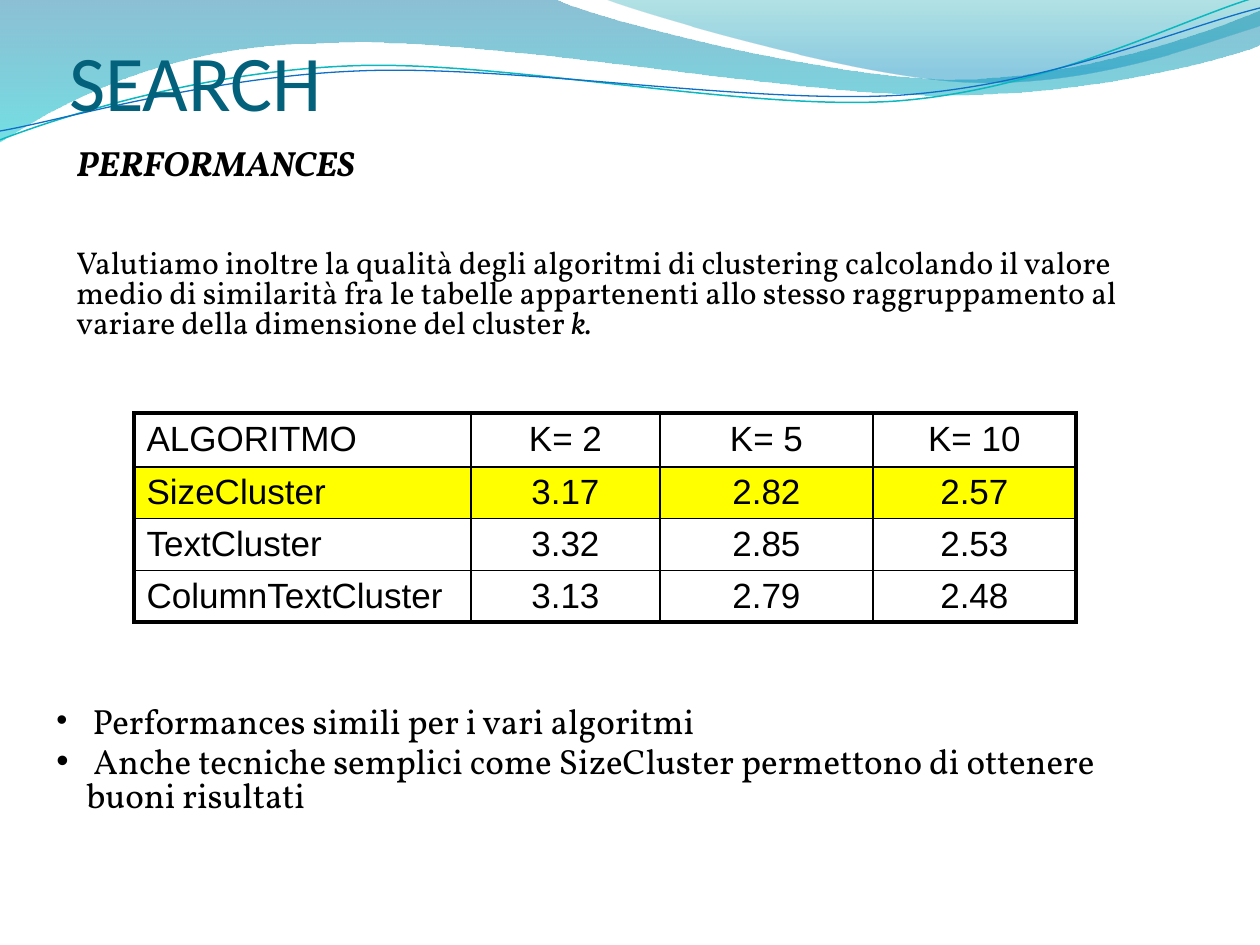
from math import cos, radians, sin

from lxml import etree
from pptx import Presentation
from pptx.dml.color import RGBColor
from pptx.enum.text import MSO_ANCHOR as Anchor, MSO_AUTO_SIZE as AutoSize, PP_ALIGN as Align
from pptx.oxml.ns import qn
from pptx.util import Pt

PX = 914400 / 126  # EMU in one px
TILT = -2.7        # degrees the thin strands are turned


def px(*lengths):
    return [round(length * PX) for length in lengths]


def color(hex_text):
    return RGBColor.from_string(hex_text)


deck = Presentation()
deck.slide_width, deck.slide_height = px(1260, 945)
page = deck.slides.add_slide(deck.slide_layouts[5])

# Waves: start, then line ends (2 numbers) or Bezier curves (6 numbers);
# the bands have gradient stops (position, colour, opacity),
# the strands a line colour, a line width and the centre they turn about
waves = [
    ([(0, -1), (554, -1), (600, 21, 837, 79, 955, 79),
      (1075, 79, 1207, 33, 1260, 11), (1261, 45),
      (1239, 55, 1096, 96, 940, 95), (784, 95, 481, 35, 324, 43),
      (163, 44, 58, 105, -1, 142), (0, -1)],
     [(0, "0074A1", 45), (100, "00C6CF", 55)], None),
    ([(604, -1), (641, 14, 859, 78, 969, 82),
      (1097, 87, 1211, 40, 1260, 26), (1260, 0), (604, -1)],
     [(0, "00A1A9", 30), (80, "008BBF", 45)], None),
    ([(0, 140), (60, 117, 199, 72, 349, 66), (498, 59, 747, 112, 898, 101),
      (1050, 89, 1182, 19, 1257, -3)], None, ("0AB8BF", 0.85, 629, 72)),
    ([(0, 131), (59, 121, 207, 77, 357, 71), (508, 64, 752, 105, 903, 95),
      (1053, 84, 1186, 26, 1260, 8)], None, ("0F6FC6", 0.75, 629, 74)),
]
for segments, stops, strand in waves:
    points = [pair for segment in segments for pair in zip(segment[::2], segment[1::2])]
    if strand:
        # Level the strand; the shape's rotation tilts it again
        hex_text, width, mid_x, mid_y = strand
        turn = radians(-TILT)
        points = [(mid_x + (x - mid_x) * cos(turn) - (y - mid_y) * sin(turn),
                   mid_y + (x - mid_x) * sin(turn) + (y - mid_y) * cos(turn))
                  for x, y in points]
    builder = page.shapes.build_freeform(*px(*points[0]))
    builder.add_line_segments([px(*point) for point in points[1:]],
                              close=stops is not None)
    wave = builder.convert_to_shape()
    wave.shadow.inherit = False

    # Each run of three points that belongs to a curve becomes one Bezier
    outline = wave._element.find(".//" + qn("a:path"))
    nodes = iter(outline.findall(qn("a:lnTo")))
    for segment in segments[1:]:
        first = next(nodes)
        if len(segment) == 6:
            curve = etree.Element(qn("a:cubicBezTo"))
            first.addprevious(curve)
            for node in (first, next(nodes), next(nodes)):
                curve.append(node[0])
                outline.remove(node)

    if strand:
        wave.rotation = TILT
        wave.fill.background()
        wave.line.color.rgb = color(hex_text)
        wave.line.width = Pt(width)
    else:
        wave.line.fill.background()
        wave.fill.gradient()
        wave.fill.gradient_angle = 270
        stop_list = wave.fill._fill._gradFill.find(qn("a:gsLst"))
        for old_stop in list(stop_list):
            stop_list.remove(old_stop)
        for position, hex_text, opacity in stops:
            stop = etree.SubElement(stop_list, qn("a:gs"), pos=str(position * 1000))
            tint = etree.SubElement(stop, qn("a:srgbClr"), val=hex_text)
            etree.SubElement(tint, qn("a:alpha"), val=str(opacity * 1000))

# Title, in front of the waves
title = page.shapes.title
page.shapes._spTree.append(title._element)
title.left, title.top, title.width, title.height = px(69, 20, 1134, 107)
frame = title.text_frame
frame.vertical_anchor = Anchor.BOTTOM
frame.margin_left, frame.margin_top, frame.margin_right, frame.margin_bottom = px(0, 6, 0, 6)
frame.margin_bottom = 0
para = frame.paragraphs[0]
para.alignment = Align.LEFT
span = para.add_run()
span.text = "SEARCH"
span.font.size, span.font.name = Pt(45), "Calibri"
span.font.color.rgb = color("04617B")

# Table of mean similarity by cluster size; rows grow to fit their text
rows = [
    ("ALGORITMO", "K= 2", "K= 5", "K= 10"),
    ("SizeCluster", "3.17", "2.82", "2.57"),
    ("TextCluster", "3.32", "2.85", "2.53"),
    ("ColumnTextCluster", "3.13", "2.79", "2.48"),
]
widths, heights = (337, 189, 213, 203), (54, 23, 23, 39)
holder = page.shapes.add_table(4, 4, *px(134, 413, sum(widths), 218))
table = holder.table
table.first_row = table.horz_banding = False
for column, width in zip(table.columns, px(*widths)):
    column.width = width
for row, height in zip(table.rows, px(*heights)):
    row.height = height
holder.height = px(218)[0]
for r, texts in enumerate(rows):
    for c, text in enumerate(texts):
        cell = table.cell(r, c)
        para = cell.text_frame.paragraphs[0]
        para.alignment = Align.CENTER if c else Align.LEFT
        span = para.add_run()
        span.text = text
        span.font.size, span.font.name = Pt(20), "Arial"
        span.font.color.rgb = color("000000")
        # Thick outer edges, thin inner ones
        edges = {"a:lnL": c == 0, "a:lnR": c == 3, "a:lnT": r == 0, "a:lnB": r == 3}
        for tag, outer in edges.items():
            edge = etree.SubElement(cell._tc.get_or_add_tcPr(), qn(tag),
                                    w=str(Pt(2.25 if outer else 1)))
            solid = etree.SubElement(edge, qn("a:solidFill"))
            etree.SubElement(solid, qn("a:srgbClr"), val="000000")
        if r == 1:
            cell.fill.solid()
            cell.fill.fore_color.rgb = color("FFFF00")
        else:
            cell.fill.background()

# Text boxes: place, line spacing, bulleted, paragraphs of (text, size, bold, italic)
boxes = [
    ((64, 244, 1150, 103), 0.8, False, [[
        ("Valutiamo inoltre la qualità degli algoritmi di clustering calcolando "
         "il valore medio di similarità fra le tabelle appartenenti allo stesso "
         "raggruppamento al variare della dimensione del cluster ", 18, False, False),
        ("k.", 18, False, True)]]),
    ((44, 701, 1150, 122), 0.8, True, [
        [(" ", 18, False, False),
         ("Performances simili per i vari algoritmi", 20, False, False)],
        [(" Anche tecniche semplici come SizeCluster permettono di ottenere "
          "buoni risultati", 20, False, False)]]),
    ((64, 135, 377, 59), None, False, [[("PERFORMANCES", 20, True, True)]]),
]
for place, spacing, bulleted, paragraphs in boxes:
    frame = page.shapes.add_textbox(*px(*place)).text_frame
    frame.word_wrap = True
    if spacing:
        frame.auto_size = AutoSize.SHAPE_TO_FIT_TEXT
    for i, spans in enumerate(paragraphs):
        para = frame.add_paragraph() if i else frame.paragraphs[0]
        para.line_spacing, para.space_before = spacing, Pt(4)
        if bulleted:
            props = para._p.get_or_add_pPr()
            indent = px(30)[0]
            props.set("marL", str(indent))
            props.set("indent", str(-indent))
            etree.SubElement(props, qn("a:buFont"), typeface="Arial")
            etree.SubElement(props, qn("a:buChar"), char="•")
        for text, size, bold, italic in spans:
            span = para.add_run()
            span.text = text
            span.font.size, span.font.name = Pt(size), "Vollkorn"
            span.font.bold, span.font.italic = bold, italic
            span.font.color.rgb = color("000000")

deck.save("out.pptx")
